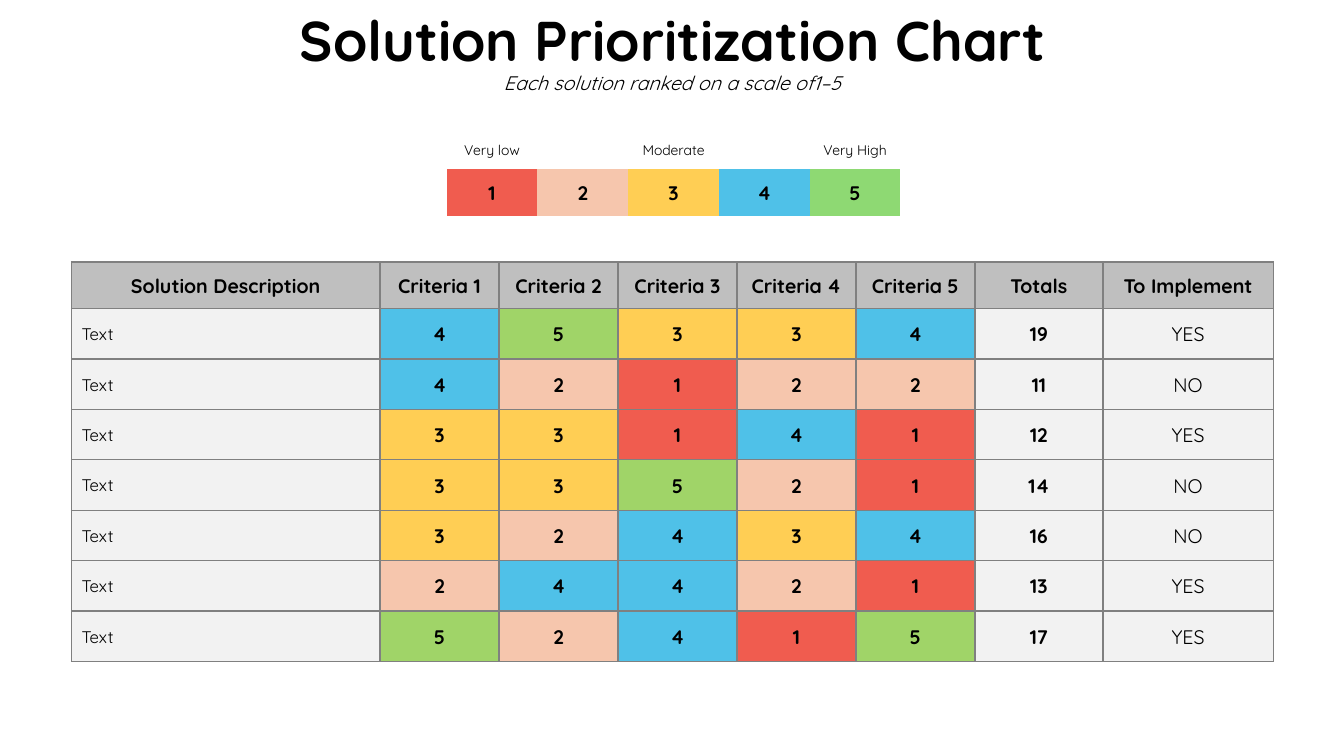
from lxml.etree import SubElement
from pptx import Presentation
from pptx.dml.color import RGBColor
from pptx.enum.text import MSO_ANCHOR as Anchor, PP_ALIGN as Align
from pptx.oxml.ns import qn
from pptx.util import Inches, Pt

BLACK = RGBColor(0, 0, 0)
GRAY = RGBColor(0xBF, 0xBF, 0xBF)
PALE = RGBColor(0xF2, 0xF2, 0xF2)
RED = RGBColor(0xF0, 0x5C, 0x4F)
PEACH = RGBColor(0xF6, 0xC6, 0xAD)
GOLD = RGBColor(0xFF, 0xCE, 0x54)
BLUE = RGBColor(0x4F, 0xC1, 0xE8)
GREEN = RGBColor(0xA0, 0xD4, 0x68)
LIME = RGBColor(0x8E, 0xD9, 0x73)
EDGE = RGBColor(0x80, 0x80, 0x80)

RANKS = [RED, PEACH, GOLD, BLUE, GREEN]
PLAIN = "{2D5ABB26-0587-4C30-8999-92F81FD0307C}"  # table style without grid


class Deck:
    font = "Quicksand"
    pad = Inches(0.1)

    def __init__(self):
        self.prs = Presentation()
        self.prs.slide_width = Inches(13.33)
        self.prs.slide_height = Inches(7.5)
        self.slide = self.prs.slides.add_slide(self.prs.slide_layouts[5])

    def label(self, para, text, size, bold=False, italic=False):
        run = para.add_run()
        run.text = text
        look = {"name": self.font, "size": Pt(size), "bold": bold, "italic": italic}
        for key, value in look.items():
            setattr(run.font, key, value)
        run.font.color.rgb = BLACK

    def title(self, box, head, sub):
        shape = self.slide.shapes.title
        for key, value in zip(("left", "top", "width", "height"), box):
            setattr(shape, key, Inches(value))
        frame = shape.text_frame
        frame.word_wrap = True
        frame.vertical_anchor = Anchor.MIDDLE
        para = frame.paragraphs[0]
        para.alignment = Align.CENTER
        para.line_spacing = 0.9
        self.label(para, head, 40, bold=True)
        para.add_line_break()
        self.label(para, sub, 14, italic=True)

    def table(self, left, top, cols, rows):
        table = self.slide.shapes.add_table(
            len(rows), len(cols), Inches(left), Inches(top),
            Inches(sum(cols)), Inches(sum(rows))).table
        table.first_row = table.horz_banding = False
        table._tbl.tblPr.find(qn("a:tableStyleId")).text = PLAIN
        for col, width in zip(table.columns, cols):
            col.width = Inches(width)
        for row, height in zip(table.rows, rows):
            row.height = Inches(height)
        return table

    def border(self, cell):
        props = cell._tc.get_or_add_tcPr()
        for side in ("lnL", "lnR", "lnT", "lnB"):
            line = SubElement(props, qn(f"a:{side}"), w=str(Pt(1)))
            fill = SubElement(line, qn("a:solidFill"))
            SubElement(fill, qn("a:srgbClr"), val=str(EDGE))

    def cell(self, cell, text, size=14, bold=True, align=Align.CENTER,
             fill=None, edge=False):
        pad = self.pad if text else 0
        for side in ("left", "right", "top", "bottom"):
            setattr(cell, f"margin_{side}", pad)
        cell.vertical_anchor = Anchor.MIDDLE
        if edge:
            self.border(cell)
        if fill is None:
            cell.fill.background()
        else:
            cell.fill.solid()
            cell.fill.fore_color.rgb = fill
        if text:
            para = cell.text_frame.paragraphs[0]
            para.alignment = align
            para.line_spacing = 1.07
            self.label(para, text, size, bold)


def main():
    deck = Deck()
    deck.title((2.87, 0, 7.6, 1.08), "Solution Prioritization Chart",
               "Each solution ranked on a scale of1–5")

    # Score table
    heads = ["Solution Description", *(f"Criteria {n}" for n in range(1, 6)),
             "Totals", "To Implement"]
    scores = [
        ([4, 5, 3, 3, 4], "YES"),
        ([4, 2, 1, 2, 2], "NO"),
        ([3, 3, 1, 4, 1], "YES"),
        ([3, 3, 5, 2, 1], "NO"),
        ([3, 2, 4, 3, 4], "NO"),
        ([2, 4, 4, 2, 1], "YES"),
        ([5, 2, 4, 1, 5], "YES"),
    ]
    grid = deck.table(0.71, 2.6, [3.06] + [1.18] * 5 + [1.27, 1.69],
                      [0.46] + [0.5] * len(scores))
    for col, head in enumerate(heads):
        deck.cell(grid.cell(0, col), head, fill=GRAY, edge=True)
    for row, (marks, verdict) in enumerate(scores, 1):
        deck.cell(grid.cell(row, 0), "Text", 12, False, Align.LEFT, PALE, True)
        for col, mark in enumerate(marks, 1):
            deck.cell(grid.cell(row, col), str(mark), fill=RANKS[mark - 1], edge=True)
        deck.cell(grid.cell(row, 6), str(sum(marks)), fill=PALE, edge=True)
        deck.cell(grid.cell(row, 7), verdict, bold=False, fill=PALE, edge=True)

    # Rating scale
    labels = ["Very low", "", "Moderate", "", "Very High"]
    scale = deck.table(4.43, 1.29, [0.9] * 5, [0.39, 0.46])
    for col, (label, color) in enumerate(zip(labels, RANKS[:4] + [LIME])):
        deck.cell(scale.cell(0, col), label, 10, False)
        deck.cell(scale.cell(1, col), str(col + 1), fill=color)

    deck.prs.save("out.pptx")


if __name__ == "__main__":
    main()
